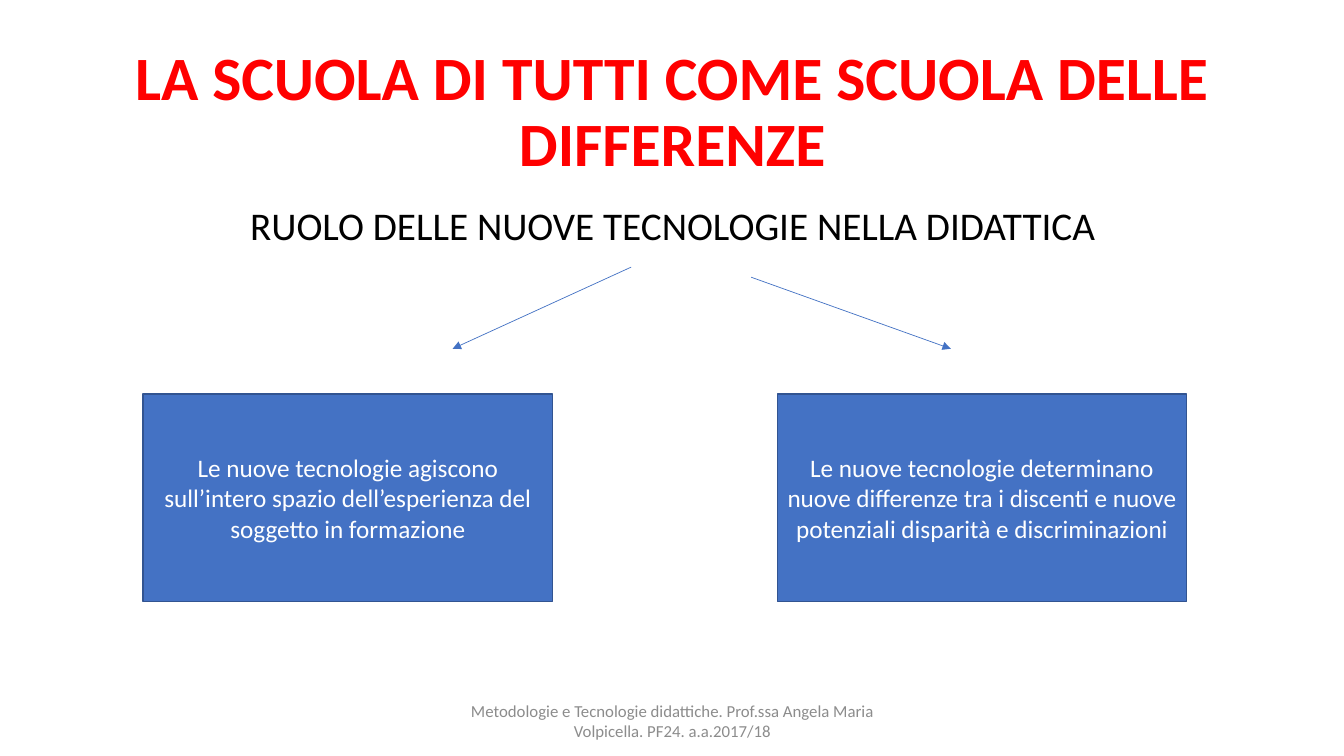
"""Build a slide on the role of new technologies in teaching."""
from lxml import etree
from pptx import Presentation
from pptx import util as u
from pptx.dml.color import RGBColor
from pptx.enum import shapes, text
from pptx.oxml.ns import qn

PX = 9144
BLUE = "4472C4"


def rgb(color):
    return RGBColor.from_string(color)


def write(sp, words, size, color, anchor=text.MSO_ANCHOR.MIDDLE):
    tf = sp.text_frame
    tf.word_wrap = True
    tf.vertical_anchor = anchor
    p = tf.paragraphs[0]
    p.text = words
    p.alignment = text.PP_ALIGN.CENTER
    p.font.name = "Calibri"
    p.font.size = u.Pt(size)
    p.font.color.rgb = rgb(color)
    return p


prs = Presentation()
prs.slide_width, prs.slide_height = 1333 * PX, 750 * PX
s = prs.slides.add_slide(prs.slide_layouts[6])

sp = s.shapes.add_textbox(92 * PX, 40 * PX, 1150 * PX, 145 * PX)
p = write(sp, "LA SCUOLA DI TUTTI COME SCUOLA DELLE DIFFERENZE", 44, "FF0000")
p.font.bold = True
p.line_spacing = 0.9

sp = s.shapes.add_textbox(92 * PX, 200 * PX, 1150 * PX, 476 * PX)
p = write(sp, "RUOLO DELLE NUOVE TECNOLOGIE NELLA DIDATTICA", 28, "000000", text.MSO_ANCHOR.TOP)
p.line_spacing = 0.9
p.space_before = u.Pt(10)

effects = [
    (142, "Le nuove tecnologie agiscono sull’intero spazio dell’esperienza "
          "del soggetto in formazione"),
    (771, "Le nuove tecnologie determinano nuove differenze tra i discenti "
          "e nuove potenziali disparità e discriminazioni"),
]
for left, words in effects:
    sp = s.shapes.add_shape(shapes.MSO_SHAPE.RECTANGLE, left * PX, 391 * PX, 406 * PX, 206 * PX)
    sp.shadow.inherit = False
    sp.fill.solid()
    sp.fill.fore_color.rgb = rgb(BLUE)
    sp.line.color.rgb = rgb("325491")
    sp.line.width = u.Pt(1)
    write(sp, words, 18, "FFFFFF")

for x1, y1, x2, y2 in [(626, 265, 449, 346), (745, 275, 943, 346)]:
    arrow = s.shapes.add_connector(
        shapes.MSO_CONNECTOR.STRAIGHT, x1 * PX, y1 * PX, x2 * PX, y2 * PX)
    arrow.line.color.rgb = rgb(BLUE)
    arrow.line.width = u.Pt(0.5)
    etree.SubElement(arrow.line._get_or_add_ln(), qn("a:tailEnd"), type="triangle")
    etree.SubElement(arrow._element.spPr, qn("a:effectLst"))

sp = s.shapes.add_textbox(442 * PX, 695 * PX, 450 * PX, 40 * PX)
write(sp, "Metodologie e Tecnologie didattiche. Prof.ssa Angela Maria Volpicella. "
          "PF24. a.a.2017/18", 12, "8C8C8C")

prs.save("out.pptx")
